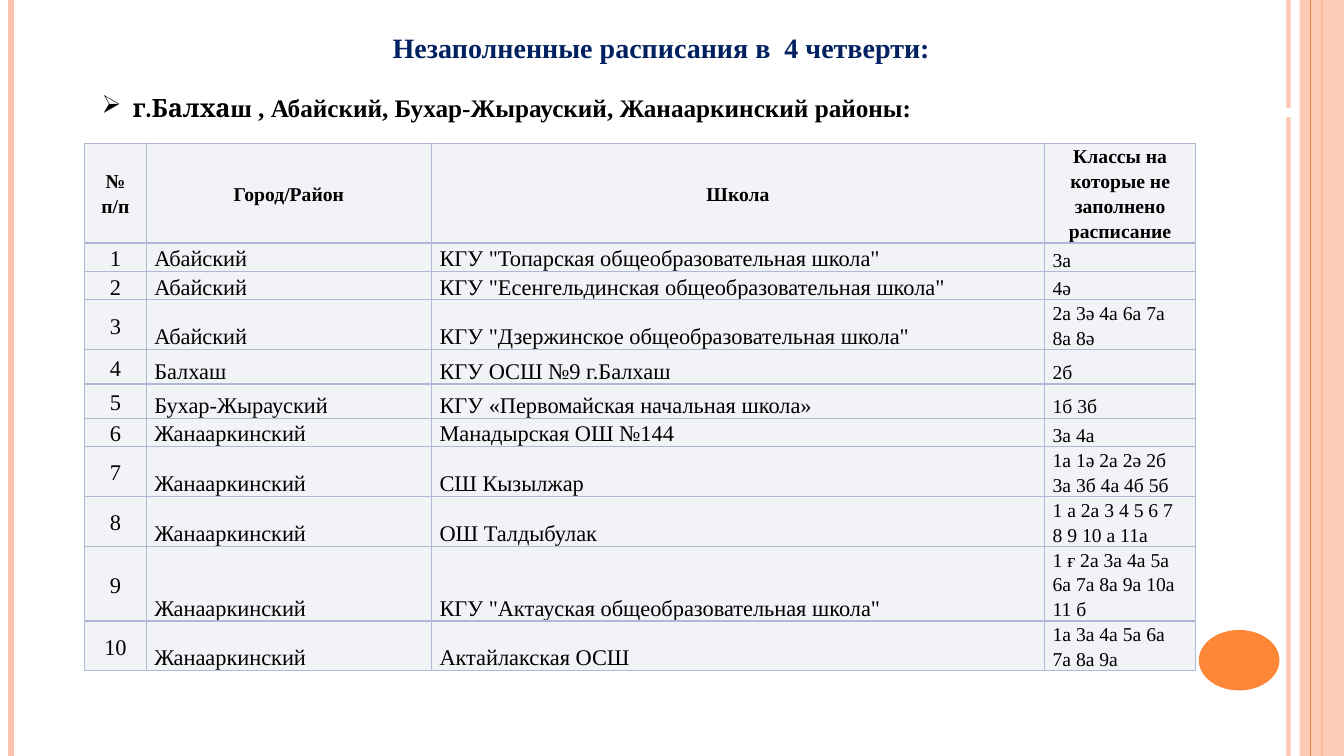
from lxml.etree import SubElement
from pptx import Presentation
from pptx.dml.color import RGBColor
from pptx.enum.shapes import MSO_CONNECTOR, MSO_SHAPE
from pptx.enum.text import MSO_ANCHOR, PP_ALIGN
from pptx.oxml.ns import qn
from pptx.util import Inches, Pt

SERIF = "Times New Roman"
PEACH, ORANGE, BORDER = "FEC3AE", "FE8637", "AEBAD5"
HEADERS = ["№ п/п", "Город/Район", "Школа", "Классы на которые не заполнено расписание"]
SCHOOLS = [
    ("Абайский", 'КГУ "Топарская общеобразовательная школа"', "3а"),
    ("Абайский", 'КГУ "Есенгельдинская общеобразовательная школа"', "4ә"),
    ("Абайский", 'КГУ "Дзержинское общеобразовательная школа"', "2а 3ә 4а 6а 7а 8а 8ә"),
    ("Балхаш", "КГУ ОСШ №9 г.Балхаш", "2б"),
    ("Бухар-Жырауский", "КГУ «Первомайская начальная школа»", "1б 3б"),
    ("Жанааркинский", "Манадырская ОШ №144", "3а 4а"),
    ("Жанааркинский", "СШ Кызылжар", "1а 1ә 2а 2ә 2б 3а 3б 4а 4б 5б"),
    ("Жанааркинский", "ОШ Талдыбулак", "1 а 2а 3 4 5 6 7 8 9 10 а 11а"),
    ("Жанааркинский", 'КГУ "Актауская общеобразовательная школа"',
     "1 ғ 2а 3а 4а 5а 6а 7а 8а 9а 10а 11 б"),
    ("Жанааркинский", "Актайлакская ОСШ", "1а 3а 4а 5а 6а 7а 8а 9а"),
]
COL_WIDTHS = [0.61, 2.83, 6.08, 1.5]
ROW_HEIGHTS = [0.99, 0.28, 0.28, 0.49, 0.34, 0.34, 0.28, 0.49, 0.49, 0.74, 0.49]
LINE_PITCH = 1.27  # line height of table text relative to its size


def color(value):
    return RGBColor.from_string(value)


def set_opacity(sp, percent):
    clr = next(sp._element.spPr.iter(qn("a:srgbClr")))
    SubElement(clr, qn("a:alpha")).set("val", str(percent * 1000))


def style_run(r, size, hex_color="000000", bold=False, font=SERIF):
    r.font.name, r.font.size, r.font.bold = font, Pt(size), bold
    r.font.color.rgb = color(hex_color)


def add_filled(s, kind, box, fill):
    sp = s.shapes.add_shape(kind, *map(Inches, box))
    sp.shadow.inherit = False
    sp.fill.solid()
    sp.fill.fore_color.rgb = color(fill)
    sp.line.fill.background()
    return sp


def add_rule(s, x, top, height, hex_color, width):
    line = s.shapes.add_connector(MSO_CONNECTOR.STRAIGHT, Inches(x), Inches(top),
                                  Inches(x), Inches(top + height))
    line.line.color.rgb = color(hex_color)
    line.line.width = Pt(width)
    SubElement(line._element.spPr, qn("a:effectLst"))
    return line


def add_frame(s, left, top, width, height):
    right = left + width
    # Vertical rules and the band at the right edge
    set_opacity(add_rule(s, right - 0.55, top, height, PEACH, 3), 93)
    add_rule(s, left + 0.11, top, height, PEACH, 4.5)
    add_rule(s, right - 0.22, top, height, ORANGE, 1.5)
    band = add_filled(s, MSO_SHAPE.RECTANGLE, (right - 0.44, top, 0.44, height), PEACH)
    set_opacity(band, 87)
    add_rule(s, right - 0.33, top, height, ORANGE, 0.75)
    # Page marker and white strip under the title
    add_filled(s, MSO_SHAPE.OVAL, (right - 1.44, top + 6.25, 0.8, 0.6), ORANGE)
    add_filled(s, MSO_SHAPE.RECTANGLE, (left + 0.26, top + 1.07, 12.6, 0.09), "FFFFFF")


def add_title(s, left, top, width, height):
    title = s.shapes.title
    title.left, title.top, title.width, title.height = map(Inches, (left, top, width, height))
    tf = title.text_frame
    tf.text = "Незаполненные расписания в  4 четверти:"
    tf.vertical_anchor = MSO_ANCHOR.TOP
    p = tf.paragraphs[0]
    p.alignment = PP_ALIGN.CENTER
    p.line_spacing = 1.0
    style_run(p.runs[0], 20, "002060", True)


def add_districts(s, left, top, width, height):
    tf = s.shapes.add_textbox(*map(Inches, (left, top, width, height))).text_frame
    tf.word_wrap = False
    p = tf.paragraphs[0]
    for text, font in (("г.Балха", "Cambria"),
                       ("ш , Абайский, Бухар-Жырауский, Жанааркинский районы:", SERIF)):
        r = p.add_run()
        r.text = text
        style_run(r, 18, bold=True, font=font)
    # Arrow bullet with a hanging indent
    pPr = p._p.get_or_add_pPr()
    pPr.set("marL", str(Inches(0.31)))
    pPr.set("indent", str(Inches(-0.31)))
    SubElement(pPr, qn("a:buChar")).set("char", "➢")


def add_borders(cell):
    tcPr = cell._tc.get_or_add_tcPr()
    for side in ("lnL", "lnR", "lnT", "lnB"):
        ln = SubElement(tcPr, qn(f"a:{side}"), w=str(Pt(1)))
        fill = SubElement(ln, qn("a:solidFill"))
        SubElement(fill, qn("a:srgbClr"), val=BORDER)


def fill_cell(cell, text, size, bold, centred):
    add_borders(cell)
    cell.fill.solid()
    cell.fill.fore_color.rgb = color("F2F3F7")
    cell.margin_left = cell.margin_right = Inches(0.08)
    cell.margin_top = cell.margin_bottom = 0
    cell.vertical_anchor = MSO_ANCHOR.MIDDLE if centred else MSO_ANCHOR.BOTTOM
    cell.text_frame.text = text
    p = cell.text_frame.paragraphs[0]
    p.alignment = PP_ALIGN.CENTER if centred else PP_ALIGN.LEFT
    p.line_spacing = Pt(size * LINE_PITCH)
    style_run(p.runs[0], size, bold=bold)


def add_school_table(s, left, top):
    rows = [HEADERS] + [(str(n), *school) for n, school in enumerate(SCHOOLS, 1)]
    box = (left, top, sum(COL_WIDTHS), sum(ROW_HEIGHTS))
    table = s.shapes.add_table(len(rows), len(HEADERS), *map(Inches, box)).table
    for column, width in zip(table.columns, COL_WIDTHS):
        column.width = Inches(width)
    for row, height in zip(table.rows, ROW_HEIGHTS):
        row.height = Inches(height)
    for i, row in enumerate(rows):
        for j, text in enumerate(row):
            header = i == 0
            size = 14 if header or j == 3 else 16
            fill_cell(table.cell(i, j), text, size, header, header or j == 0)


def main():
    prs = Presentation()
    prs.slide_width, prs.slide_height = Inches(13.33), Inches(7.5)
    s = prs.slides.add_slide(prs.slide_layouts[5])
    add_frame(s, 0, 0, 13.33, 7.5)
    add_title(s, 0.26, 0.25, 12.6, 0.44)
    add_districts(s, 0.91, 0.87, 8.42, 0.4)
    add_school_table(s, 0.84, 1.42)
    prs.save("out.pptx")


if __name__ == "__main__":
    main()
